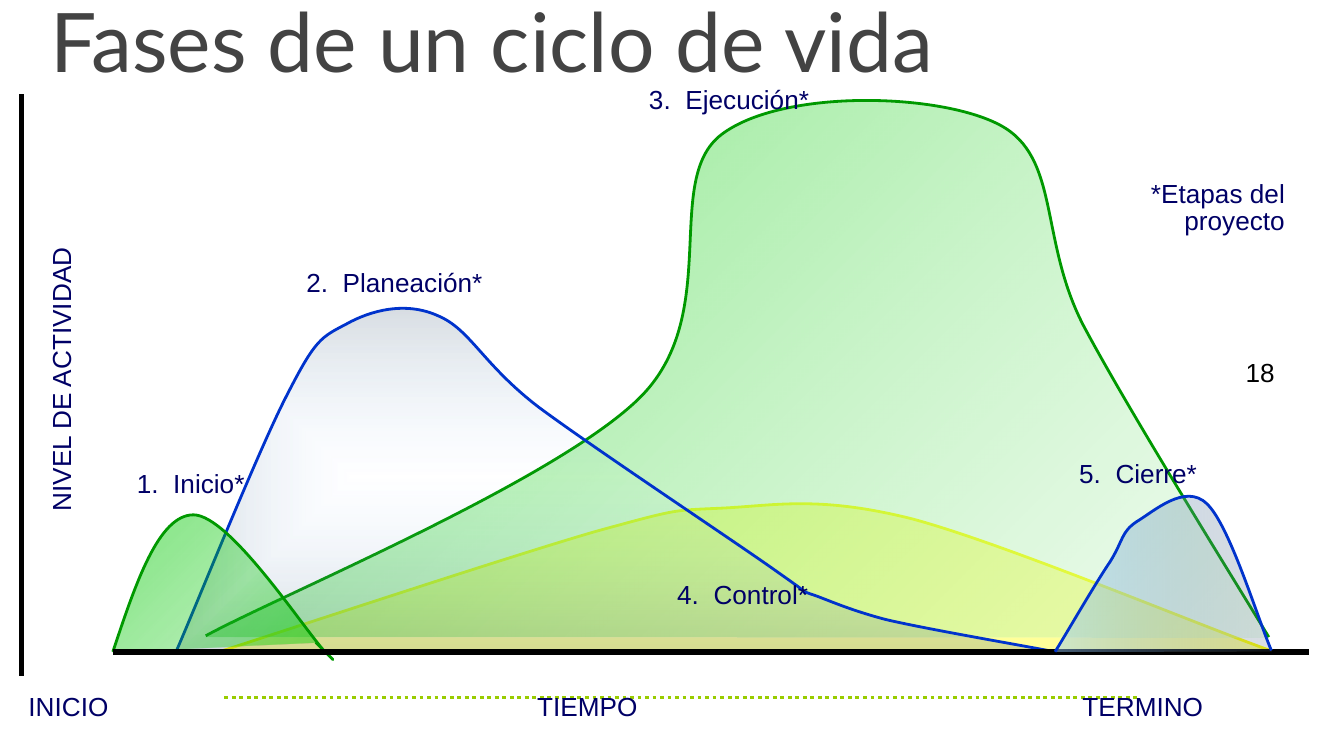
from lxml import etree
from pptx import Presentation
from pptx.dml.color import RGBColor
from pptx.enum.dml import MSO_LINE
from pptx.enum.shapes import MSO_CONNECTOR
from pptx.enum.text import MSO_ANCHOR, PP_ALIGN
from pptx.oxml import parse_xml
from pptx.oxml.ns import nsdecls, qn
from pptx.util import Pt

BLACK = RGBColor(0x00, 0x00, 0x00)
GREY = RGBColor(0x43, 0x43, 0x43)
NAVY = RGBColor(0x00, 0x00, 0x66)
BLUE = RGBColor(0x00, 0x33, 0xCC)
SKY = RGBColor(0x99, 0xCC, 0xFF)
SLATE = RGBColor(0x47, 0x5E, 0x76)
GREEN = RGBColor(0x00, 0x99, 0x00)
BRIGHT_GREEN = RGBColor(0x00, 0xCC, 0x00)
MID_GREEN = RGBColor(0x00, 0xC7, 0x00)
PALE_GREEN = RGBColor(0xD1, 0xF6, 0xD1)
LIME = RGBColor(0x99, 0xCC, 0x00)
YELLOW = RGBColor(0xFF, 0xFF, 0x00)
PALE_YELLOW = RGBColor(0xFF, 0xFF, 0x99)

BASELINE = 349.2
NUMBER_TAB = 19.5

presentation = Presentation()
presentation.slide_width, presentation.slide_height = Pt(720), Pt(405)
slide = presentation.slides.add_slide(presentation.slide_layouts[6])


def add_curve(start, segments, line_color, stops, direction):
    """Draw a phase from cubic segments; stops are (position %, colour, opacity %)."""
    builder = slide.shapes.build_freeform(Pt(start[0]), Pt(start[1]))
    for x1, y1, x2, y2, x3, y3 in segments:
        points = [(Pt(x), Pt(y)) for x, y in ((x1, y1), (x2, y2), (x3, y3))]
        builder.add_line_segments(points, close=False)
    shape = builder.convert_to_shape()
    # Every three straight steps become the control points of one cubic curve
    steps = list(shape._element.spPr.iter(qn("a:lnTo")))
    for first in range(0, len(steps), 3):
        cubic = etree.Element(qn("a:cubicBezTo"))
        steps[first].addprevious(cubic)
        for step in steps[first:first + 3]:
            cubic.append(step[0])
            step.getparent().remove(step)
    shape.shadow.inherit = False
    shape.line.color.rgb = line_color
    shape.line.width = Pt(1.5)
    if len(stops) == 1:
        shape.fill.solid()
        shape.fill.fore_color.rgb = stops[0][1]
        return
    stop_xml = "".join(
        f'<a:gs pos="{position * 1000}"><a:srgbClr val="{color}">'
        f'<a:alpha val="{opacity * 1000}"/></a:srgbClr></a:gs>'
        for position, color, opacity in stops
    )
    gradient = parse_xml(
        f'<a:gradFill {nsdecls("a")} rotWithShape="1">'
        f"<a:gsLst>{stop_xml}</a:gsLst>{direction}</a:gradFill>"
    )
    shape._element.spPr.find(qn("a:custGeom")).addnext(gradient)


def add_text(text, left, top, width, height, size=14, font="Arial", color=NAVY,
             align=PP_ALIGN.LEFT, spacing=None, rotation=0, **frame_format):
    box = slide.shapes.add_textbox(Pt(left), Pt(top), Pt(width), Pt(height))
    box.rotation = rotation
    frame = box.text_frame
    frame.word_wrap = True
    for name, value in frame_format.items():
        setattr(frame, name, value)
    paragraph = frame.paragraphs[0]
    paragraph.alignment = align
    paragraph.line_spacing = spacing
    if "\t" in text:
        tabs = etree.SubElement(paragraph._p.get_or_add_pPr(), qn("a:tabLst"))
        etree.SubElement(tabs, qn("a:tab"), pos=str(Pt(NUMBER_TAB)), algn="l")
    run = paragraph.add_run()
    run.text = text
    for name, value in {"size": Pt(size), "name": font}.items():
        setattr(run.font, name, value)
    run.font.color.rgb = color


DIAGONAL = '<a:lin ang="2700000" scaled="1"/>'
HORIZONTAL = '<a:lin ang="0" scaled="1"/>'
FROM_CENTRE = ('<a:path path="rect"><a:fillToRect l="50000" t="50000" '
               'r="50000" b="50000"/></a:path>')
PADDED = {"margin_top": Pt(7.2), "margin_bottom": Pt(7.2)}
LABEL = {"spacing": 0.85, "vertical_anchor": MSO_ANCHOR.MIDDLE}

add_text("18", 660.2, 183.6, 43.2, 31, color=BLACK,
         vertical_anchor=MSO_ANCHOR.MIDDLE, **PADDED)
add_text("Fases de un ciclo de vida", 20.2, 13.7, 530.6, 41, size=44, font="Lato",
         color=GREY, vertical_anchor=MSO_ANCHOR.BOTTOM, **PADDED)

# Lines: the time span goes behind the curves, the axes in front of them
lines = {
    "time span": (120.2, 373.7, 610.6, 373.7, LIME, 2, MSO_LINE.ROUND_DOT),
    "activity axis": (11.5, 50.4, 11.5, 362.2, BLACK, 3, None),
    "time axis": (60.5, BASELINE, 701.3, BASELINE, BLACK, 3, None),
}
connectors = {}
for name, (x1, y1, x2, y2, color, width, dash) in lines.items():
    connector = slide.shapes.add_connector(
        MSO_CONNECTOR.STRAIGHT, Pt(x1), Pt(y1), Pt(x2), Pt(y2))
    connector.line.color.rgb = color
    connector.line.width = Pt(width)
    if dash:
        connector.line.dash_style = dash
    etree.SubElement(connector._element.spPr, qn("a:effectLst"))
    connectors[name] = connector

# Control
add_curve((117.4, BASELINE), [
    (151.2, 338.4, 275, 297.4, 320.4, 284.4),
    (365, 272.2, 360, 273.6, 388.1, 272.2),
    (416.2, 270.7, 439.2, 265.7, 488.2, 277.9),
    (537.1, 290.9, 640.1, 334.1, 680.4, 348.5),
], YELLOW, [(0, PALE_YELLOW, 100)], None)
# Ejecución
add_curve((110.2, 340.6), [
    (148.3, 319.7, 295.9, 258.5, 342, 213.8),
    (388.1, 169.2, 354.2, 96.5, 386.6, 72),
    (419, 47.5, 503.3, 49.7, 535.7, 67),
    (568.1, 84.2, 556.6, 128.2, 580.3, 174.2),
    (604.8, 220.3, 658.8, 306.7, 679.7, 341.3),
], GREEN, [(0, BRIGHT_GREEN, 50), (100, PALE_GREEN, 33)], DIAGONAL)
# Planeación
add_curve((94.3, BASELINE), [
    (104.4, 326.2, 139, 239.8, 154.1, 211),
    (169.2, 181.4, 172.1, 180.7, 185.8, 173.5),
    (198.7, 166.3, 217.4, 161.3, 234.7, 169.2),
    (252, 176.4, 258.5, 195.1, 288.7, 218.2),
    (319.7, 241.2, 393.8, 290.2, 416.9, 306.7),
    (440.6, 323.3, 427.7, 315.4, 430.6, 316.8),
    (433.4, 319, 427, 315.4, 434.2, 318.2),
    (441.4, 320.4, 452.9, 326.2, 474.5, 331.9),
    (496.1, 337, 546.5, 345.6, 565.2, BASELINE),
], BLUE, [(0, SKY, 0), (100, SLATE, 22)], FROM_CENTRE)
# Inicio
add_curve((60.5, BASELINE), [
    (72.7, 312.5, 85, 275.8, 103.7, 275.8),
    (123.1, 275.8, 163.4, 337.7, 174.2, BASELINE),
    (185.8, 360.7, 169.9, 344.9, 169.2, 344.2),
], GREEN, [(0, BRIGHT_GREEN, 50), (50, MID_GREEN, 33), (100, BRIGHT_GREEN, 50)], DIAGONAL)

for name in ("activity axis", "time axis"):
    slide.shapes._spTree.append(connectors[name]._element)

phases = [
    ("Inicio*", 66.2, 247.7, 102.2),
    ("Planeación*", 157, 139.7, 164.2),
    ("Ejecución*", 340.6, 41.8, 153.4),
    ("Control*", 355.7, 306.7, 113),
    ("Cierre*", 571, 241.9, 102.2),
]
for number, (phase, left, top, width) in enumerate(phases, 1):
    add_text(f"{number}.\t{phase}", left, top, width, 25.2, **LABEL)

add_text("NIVEL DE ACTIVIDAD", -69.8, 162, 209.5, 28.8, rotation=270)
for text, left, width in [("INICIO", 0, 73.4), ("TIEMPO", 272.2, 85), ("TERMINO", 555.8, 113)]:
    add_text(text, left, 366.5, width, 28.8, align=PP_ALIGN.CENTER)

# Cierre
add_curve((565.2, BASELINE), [
    (570.2, 341.3, 586.8, 312.5, 594.7, 301),
    (601.9, 289.4, 600.5, 285.1, 609.1, 279.4),
    (617.8, 274.3, 635, 258.5, 646.6, 270),
    (658.8, 281.5, 673.9, 331.9, 681.1, 348.5),
], BLUE, [(0, SKY, 47), (100, SLATE, 20)], HORIZONTAL)

add_text("*Etapas del proyecto", 599, 94.3, 96.5, 35.3, align=PP_ALIGN.RIGHT, **LABEL)

presentation.save("out.pptx")
